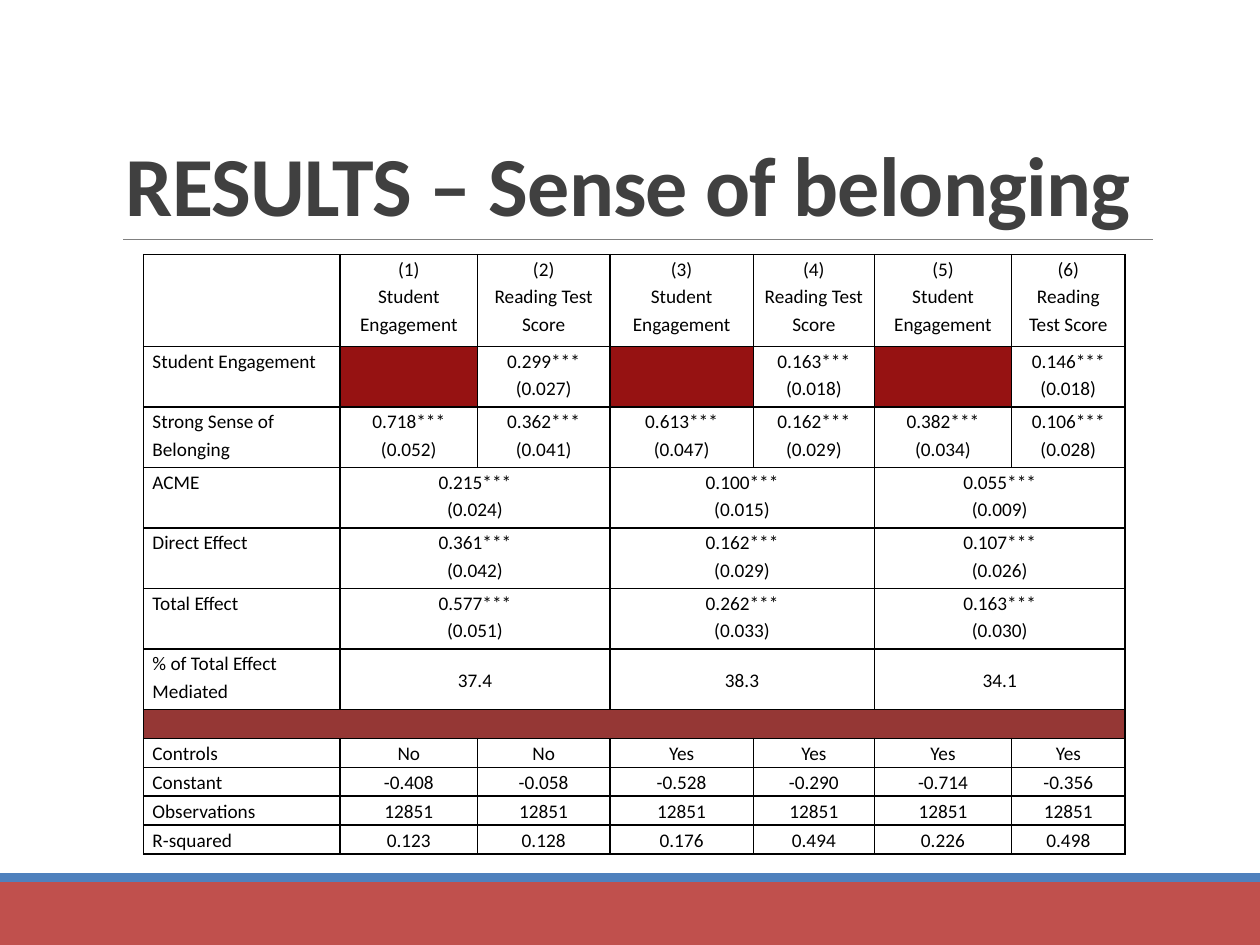
from dataclasses import dataclass

from lxml import etree
from pptx import Presentation
from pptx.dml.color import RGBColor
from pptx.enum.shapes import MSO_CONNECTOR, MSO_SHAPE
from pptx.enum.text import MSO_ANCHOR, PP_ALIGN
from pptx.oxml.ns import qn
from pptx.util import Inches, Pt

RECTANGLE = MSO_SHAPE.RECTANGLE
STRAIGHT = MSO_CONNECTOR.STRAIGHT
TOP, MIDDLE, BOTTOM = MSO_ANCHOR.TOP, MSO_ANCHOR.MIDDLE, MSO_ANCHOR.BOTTOM
LEFT, CENTER = PP_ALIGN.LEFT, PP_ALIGN.CENTER


@dataclass(frozen=True)
class Theme:
    font: str = "Calibri"
    title_size: float = 48
    cell_size: float = 11
    title: str = "404040"
    text: str = "000000"
    rule: str = "808080"
    border: str = "000000"
    footer: str = "C0504D"
    stripe: str = "4F81BD"
    blocked: str = "961212"
    band: str = "953735"


THEME = Theme()

COLUMN_WIDTHS = [1.56, 1.09, 1.05, 1.14, 0.96, 1.09, 0.9]
ROW_HEIGHTS = [0.73] + [0.48] * 6 + [0.23] * 5

# Special values of a cell: filled without text, or joined to the cell before
BLOCKED, JOINED = "blocked", "joined"

ENGAGEMENT, READING = "Student Engagement", "Reading Test Score"
HEADER = [""] + [f"({number})\n{READING if number % 2 == 0 else ENGAGEMENT}"
                 for number in range(1, 7)]


def paired(label, *values):
    """Row whose values each span the two columns of one model."""
    return [label] + [part for value in values for part in (value, JOINED)]


ROWS = [
    HEADER,
    ["Student Engagement", BLOCKED, "0.299***\n(0.027)", BLOCKED,
     "0.163***\n(0.018)", BLOCKED, "0.146***\n(0.018)"],
    ["Strong Sense of Belonging", "0.718***\n(0.052)", "0.362***\n(0.041)",
     "0.613***\n(0.047)", "0.162***\n(0.029)", "0.382***\n(0.034)",
     "0.106***\n(0.028)"],
    paired("ACME", "0.215***\n(0.024)", "0.100***\n(0.015)", "0.055***\n(0.009)"),
    paired("Direct Effect", "0.361***\n(0.042)", "0.162***\n(0.029)",
           "0.107***\n(0.026)"),
    paired("Total Effect", "0.577***\n(0.051)", "0.262***\n(0.033)",
           "0.163***\n(0.030)"),
    paired("% of Total Effect Mediated", "37.4", "38.3", "34.1"),
    [""] + [JOINED] * 6,
    ["Controls", "No", "No", "Yes", "Yes", "Yes", "Yes"],
    ["Constant", "-0.408", "-0.058", "-0.528", "-0.290", "-0.714", "-0.356"],
    ["Observations"] + ["12851"] * 6,
    ["R-squared", "0.123", "0.128", "0.176", "0.494", "0.226", "0.498"],
]
MEDIATED_ROW, BAND_ROW = 6, 7


def color(value):
    return RGBColor.from_string(value)


def add_span(para, text, size, tint, bold=False):
    span = para.add_run()
    span.text = text
    span.font.name = THEME.font
    span.font.size = Pt(size)
    span.font.bold = bold
    span.font.color.rgb = color(tint)
    return span


def add_bar(page, left, top, width, height, tint):
    bar = page.shapes.add_shape(RECTANGLE, Inches(left), Inches(top),
                                Inches(width), Inches(height))
    bar.shadow.inherit = False
    bar.fill.solid()
    bar.fill.fore_color.rgb = color(tint)
    bar.line.fill.background()


def add_footer(page, left, top, width, height):
    """Red footer with a thin blue stripe along its top."""
    stripe_height = 0.07
    add_bar(page, left, top + stripe_height, width, height - stripe_height,
            THEME.footer)
    add_bar(page, left, top, width, stripe_height, THEME.stripe)


def add_title(page, left, top, width, height, text):
    """Title resting on a thin rule."""
    bottom = top + height
    rule = page.shapes.add_connector(STRAIGHT, Inches(left + 0.08), Inches(bottom),
                                     Inches(left + width), Inches(bottom))
    rule.line.color.rgb = color(THEME.rule)
    rule.line.width = Pt(0.5)
    etree.SubElement(rule._element.spPr, qn("a:effectLst"))

    box = page.shapes.add_textbox(Inches(left), Inches(top),
                                  Inches(width), Inches(height))
    frame = box.text_frame
    frame.word_wrap = True
    frame.vertical_anchor = BOTTOM
    para = frame.paragraphs[0]
    para.line_spacing = 0.85
    span = add_span(para, text, THEME.title_size, THEME.title, bold=True)
    span.font._element.set("spc", "-50")


def set_borders(cell):
    properties = cell._tc.get_or_add_tcPr()
    for side in ("a:lnL", "a:lnR", "a:lnT", "a:lnB"):
        line = etree.SubElement(properties, qn(side), w=str(Pt(1)))
        fill = etree.SubElement(line, qn("a:solidFill"))
        etree.SubElement(fill, qn("a:srgbClr"), val=THEME.border)


def fill_cell(cell, text, align, anchor, tint):
    set_borders(cell)
    if tint:
        cell.fill.solid()
        cell.fill.fore_color.rgb = color(tint)
    else:
        cell.fill.background()
    cell.margin_left = cell.margin_right = Inches(0.07)
    cell.margin_top = cell.margin_bottom = 0
    cell.vertical_anchor = anchor
    frame = cell.text_frame
    for index, line in enumerate(text.split("\n")):
        para = frame.add_paragraph() if index else frame.paragraphs[0]
        para.alignment = align
        para.line_spacing = 1.15
        if line:
            add_span(para, line, THEME.cell_size, THEME.text)
        else:
            # Keeps an empty cell from stretching its row
            etree.SubElement(para._p, qn("a:endParaRPr"),
                             sz=str(THEME.cell_size * 100))


def add_results_table(page, left, top, width, height):
    frame = page.shapes.add_table(len(ROWS), len(COLUMN_WIDTHS), Inches(left),
                                  Inches(top), Inches(width), Inches(height))
    table = frame.table
    table.first_row = table.horz_banding = False
    for column, column_width in zip(table.columns, COLUMN_WIDTHS):
        column.width = Inches(column_width)
    for row, row_height in zip(table.rows, ROW_HEIGHTS):
        row.height = Inches(row_height)

    for row, values in enumerate(ROWS):
        for column, value in enumerate(values):
            tint = THEME.blocked if value == BLOCKED else None
            if row == BAND_ROW:
                tint = THEME.band
            fill_cell(table.cell(row, column),
                      "" if value in (BLOCKED, JOINED) else value,
                      CENTER if column else LEFT,
                      MIDDLE if row == MEDIATED_ROW and column else TOP, tint)
        # Join each run of cells to the cell that starts it
        starts = [column for column, value in enumerate(values) if value != JOINED]
        for start, following in zip(starts, starts[1:] + [len(values)]):
            if following - start > 1:
                table.cell(row, start).merge(table.cell(row, following - 1))


def main():
    deck = Presentation()
    deck.slide_width, deck.slide_height = Inches(10), Inches(7.5)
    page = deck.slides.add_slide(deck.slide_layouts[6])
    add_footer(page, 0, 6.93, 10, 0.57)
    add_title(page, 0.9, 0.31, 8.25, 1.59, "RESULTS – Sense of belonging")
    add_results_table(page, 1.14, 2.02, 7.8, 4.8)
    deck.save("out.pptx")


if __name__ == "__main__":
    main()
